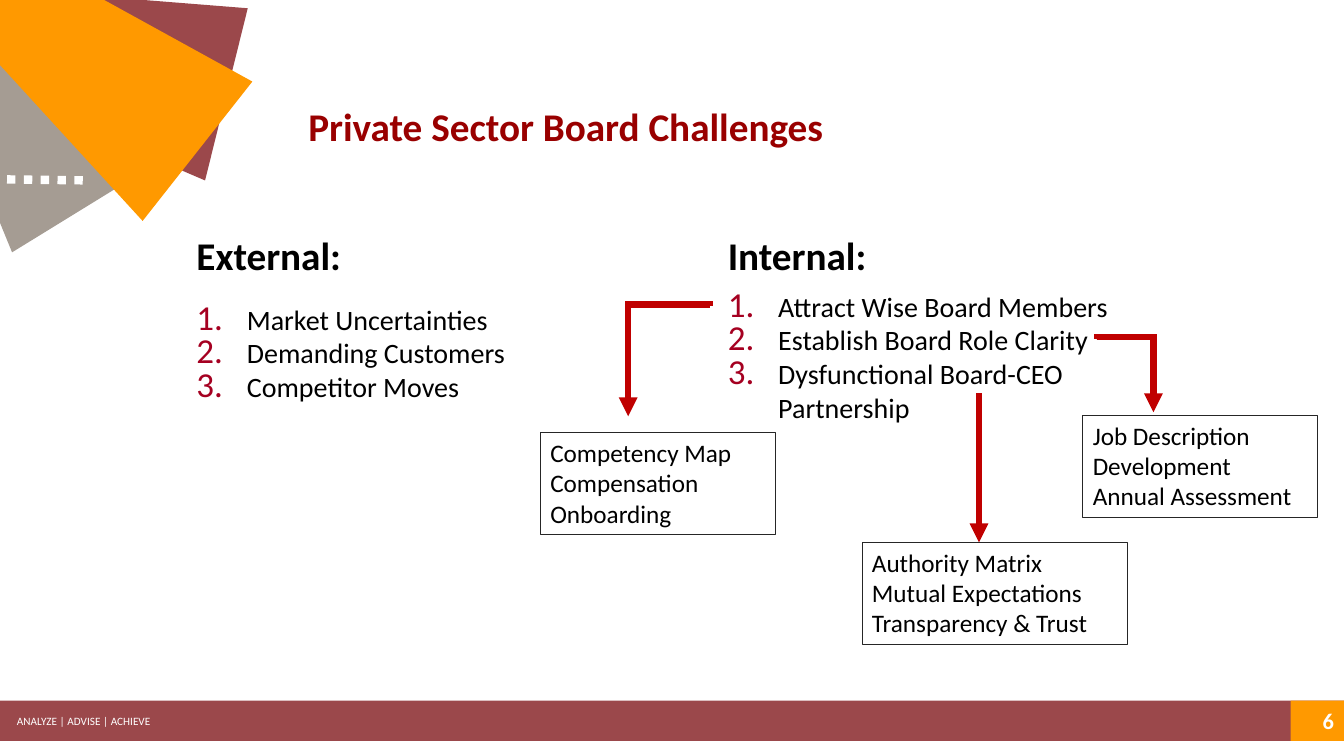
from lxml import etree
from pptx import Presentation
from pptx.dml.color import RGBColor
from pptx.enum.shapes import MSO_CONNECTOR, MSO_SHAPE
from pptx.enum.text import MSO_ANCHOR, MSO_AUTO_SIZE, PP_ALIGN
from pptx.oxml.ns import qn
from pptx.util import Inches, Pt

RECTANGLE, TRAPEZOID = MSO_SHAPE.RECTANGLE, MSO_SHAPE.TRAPEZOID
STRAIGHT, ELBOW = MSO_CONNECTOR.STRAIGHT, MSO_CONNECTOR.ELBOW
TOP, MIDDLE = MSO_ANCHOR.TOP, MSO_ANCHOR.MIDDLE
LEFT, RIGHT = PP_ALIGN.LEFT, PP_ALIGN.RIGHT
GROW = MSO_AUTO_SIZE.SHAPE_TO_FIT_TEXT

WHITE = RGBColor(0xFF, 0xFF, 0xFF)
BLACK = RGBColor(0x00, 0x00, 0x00)
MAROON = RGBColor(0x9B, 0x48, 0x4B)
TAUPE = RGBColor(0xA5, 0x9C, 0x93)
ORANGE = RGBColor(0xFF, 0x99, 0x00)
TITLE_RED = RGBColor(0x99, 0x00, 0x00)
NUMBER_RED = RGBColor(0xA5, 0x00, 0x21)
ARROW_RED = RGBColor(0xC0, 0x00, 0x00)
BORDER = RGBColor(0x26, 0x26, 0x26)

FOOTER_TEXT = {"size": Pt(8)}
PAGE_TEXT = {"size": Pt(16), "bold": True}
HEADING_TEXT = {"size": Pt(28), "bold": True}
LIST_TEXT = {"size": Pt(20)}
ACTION_TEXT = {"size": Pt(18)}

# left, top, rotation, colour
CORNER_PIECES = [
    (0.07, -0.72, 283.9, MAROON),
    (-0.71, -0.43, 328.4, TAUPE),
    (0.03, -0.66, 308.2, ORANGE),
]
# heading, left, top of list, items
CHALLENGES = [
    ("External:", 1.85, 2.95,
     ["Market Uncertainties", "Demanding Customers", "Competitor Moves"]),
    ("Internal:", 7.12, 2.82,
     ["Attract Wise Board Members", "Establish Board Role Clarity",
      "Dysfunctional Board-CEO Partnership"]),
]
# left, top, width, lines
ACTIONS = [
    (5.36, 4.29, 2.33, ["Competency Map", "Compensation", "Onboarding"]),
    (10.74, 4.12, 2.33,
     ["Job Description", "Development", "Annual Assessment"]),
    (8.55, 5.38, 2.63,
     ["Authority Matrix", "Mutual Expectations", "Transparency & Trust"]),
]


def add_child(parent, tag, **attributes):
    return etree.SubElement(parent, qn(tag), attributes)


def number_paragraph(paragraph):
    """Give the paragraph a hanging, enlarged red number."""
    properties = paragraph._p.get_or_add_pPr()
    properties.set("marL", str(Inches(0.5)))
    properties.set("indent", str(-Inches(0.5)))
    colour = add_child(properties, "a:buClr")
    add_child(colour, "a:srgbClr", val=str(NUMBER_RED))
    add_child(properties, "a:buSzPct", val="125000")
    add_child(properties, "a:buFont", typeface="+mj-lt")
    add_child(properties, "a:buAutoNum", type="arabicPeriod")


def write_lines(frame, lines, text_format, colour, align=LEFT, numbered=False):
    for index, line in enumerate(lines):
        paragraph = frame.paragraphs[0] if index == 0 else frame.add_paragraph()
        paragraph.alignment = align
        if numbered:
            number_paragraph(paragraph)
        run = paragraph.add_run()
        run.text = line
        run.font.name = "Calibri"
        run.font.color.rgb = colour
        for name, value in text_format.items():
            setattr(run.font, name, value)


def add_text(slide, box, lines, text_format, colour, wrap=True, numbered=False):
    frame = slide.shapes.add_textbox(*map(Inches, box)).text_frame
    frame.word_wrap = wrap
    frame.auto_size = GROW
    write_lines(frame, lines, text_format, colour, numbered=numbered)


def add_block(slide, kind, box, fill, rotation=0):
    block = slide.shapes.add_shape(kind, *map(Inches, box))
    block.shadow.inherit = False
    block.rotation = rotation
    block.fill.solid()
    block.fill.fore_color.rgb = fill
    block.line.fill.background()
    return block


def add_action_box(slide, left, top, width, lines):
    action = add_block(slide, RECTANGLE, (left, top, width, 1.01), WHITE)
    action.line.color.rgb = BORDER
    action.line.width = Pt(0.75)
    action.text_frame.vertical_anchor = TOP
    action.text_frame.auto_size = GROW
    write_lines(action.text_frame, lines, ACTION_TEXT, BLACK)


def add_line(slide, start, end, colour, weight, kind=STRAIGHT):
    line = slide.shapes.add_connector(kind, *map(Inches, start + end))
    line.line.color.rgb = colour
    line.line.width = Pt(weight)
    add_child(line._element.spPr, "a:effectLst")
    return line


def add_arrowhead(line):
    add_child(line.line._get_or_add_ln(), "a:tailEnd", type="triangle")


def add_corner_arrow(slide, start, end, bend):
    """Run sideways from start, then drop to end, as a turned elbow."""
    (x1, y1), (x2, y2) = start, end
    middle_x, middle_y = (x1 + x2) / 2, (y1 + y2) / 2
    half_drop, half_run = (y2 - y1) / 2, abs(x2 - x1) / 2
    leftward = x2 < x1
    side = half_drop if leftward else -half_drop
    arrow = add_line(slide, (middle_x - side, middle_y - half_run),
                     (middle_x + side, middle_y + half_run),
                     ARROW_RED, 4.5, ELBOW)
    properties = arrow._element.spPr
    quarter_turns = 1 if leftward else 3
    properties.find(qn("a:xfrm")).set("rot", str(quarter_turns * 90 * 60000))
    adjustments = properties.find(qn("a:prstGeom")).find(qn("a:avLst"))
    add_child(adjustments, "a:gd", name="adj1", fmla=f"val {bend}")
    # Square corners, as mitred joins
    add_child(arrow.line._get_or_add_ln(), "a:miter", lim="800000")
    add_arrowhead(arrow)


def add_frame(slide):
    """Draw the corner decoration and the footer band."""
    add_block(slide, RECTANGLE, (0, 6.95, 13.33, 0.4), MAROON)
    for left, top, rotation, colour in CORNER_PIECES:
        add_block(slide, TRAPEZOID, (left, top, 1.76, 2.67), colour, rotation)
    dots = add_line(slide, (0.07, 1.78), (0.89, 1.79), WHITE, 6)
    add_child(dots.line._get_or_add_ln(), "a:prstDash", val="sysDot")
    add_text(slide, (0.07, 7.04, 2.59, 0.24), ["ANALYZE | ADVISE | ACHIEVE"],
             FOOTER_TEXT, WHITE)
    page = add_block(slide, RECTANGLE, (12.8, 6.95, 0.53, 0.4), ORANGE)
    page.text_frame.vertical_anchor = MIDDLE
    write_lines(page.text_frame, ["6"], PAGE_TEXT, WHITE, RIGHT)


def main():
    deck = Presentation()
    deck.slide_width, deck.slide_height = Inches(13.33), Inches(7.5)
    slide = deck.slides.add_slide(deck.slide_layouts[6])

    add_frame(slide)
    add_text(slide, (2.96, 0.97, 5.37, 0.57),
             ["Private Sector Board Challenges"], HEADING_TEXT, TITLE_RED,
             wrap=False)
    for heading, left, list_top, items in CHALLENGES:
        add_text(slide, (left, 2.25, 1.76, 0.57), [heading], HEADING_TEXT, BLACK)
        add_text(slide, (left, list_top, 4.63, 1.45), items, LIST_TEXT, BLACK,
                 numbered=True)

    for action in ACTIONS:
        add_action_box(slide, *action)
    add_corner_arrow(slide, (7.04, 3.03), (6.23, 4.13), -800)
    add_corner_arrow(slide, (10.88, 3.36), (11.44, 4.09), -2100)
    add_arrowhead(add_line(slide, (9.71, 3.9), (9.71, 5.38), ARROW_RED, 4.5))

    deck.save("out.pptx")


if __name__ == "__main__":
    main()
